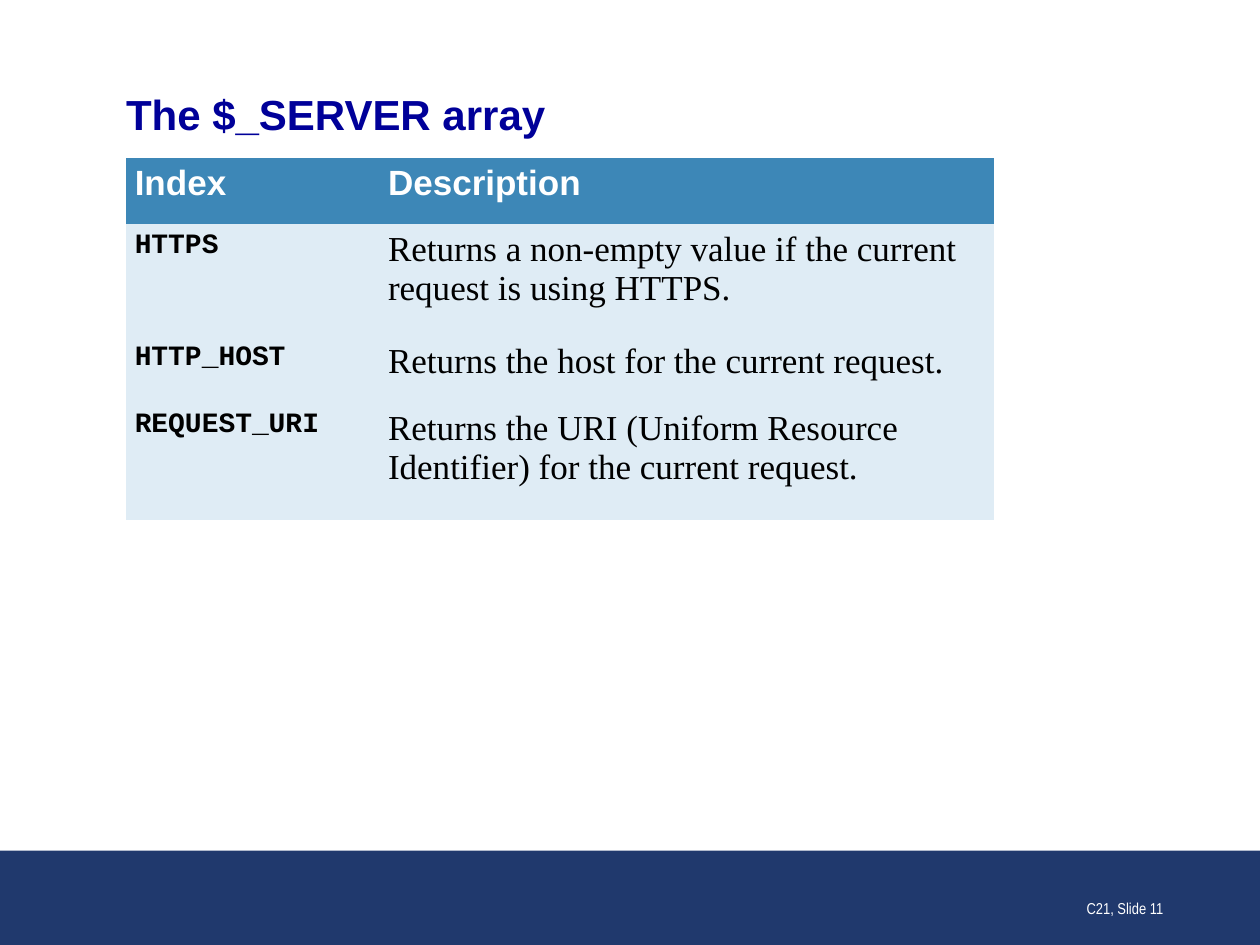
import dataclasses

import pptx
import pptx.dml.color
import pptx.enum.shapes
import pptx.enum.text
import pptx.util


@dataclasses.dataclass(frozen=True)
class TextStyle:
    font: str
    size: int
    color: str
    bold: bool = False


@dataclasses.dataclass(frozen=True)
class Theme:
    band: str = "20396D"
    header_fill: str = "3D87B7"
    body_fill: str = "DFECF5"
    title: TextStyle = TextStyle("Arial", 24, "000099", True)
    header: TextStyle = TextStyle("Arial", 20, "FFFFFF", True)
    code: TextStyle = TextStyle("Courier New", 16, "000000", True)
    description: TextStyle = TextStyle("Times New Roman", 20, "000000")
    footer: TextStyle = TextStyle("Arial Narrow", 9, "FFFFFF")


THEME = Theme()
WIDTH, HEIGHT = 10, 7.5
MARGIN = WIDTH / 10
BAND_HEIGHT = HEIGHT / 10
COLUMN_WIDTHS = (2.01, 4.88)
NO_STYLE_NO_GRID = "{2D5ABB26-0587-4C30-8999-92F81FD0307C}"

# Row height, space after, index, description
ROWS = (
    (0.53, 6, "Index", "Description"),
    (0.89, 6, "HTTPS",
     "Returns a non-empty value if the current request is using HTTPS."),
    (0.53, 6, "HTTP_HOST", "Returns the host for the current request."),
    (0.93, 9, "REQUEST_URI",
     "Returns the URI (Uniform Resource Identifier) for the current request."),
)


def inches(*lengths):
    return [pptx.util.Inches(length) for length in lengths]


def set_fill(fill, color):
    fill.solid()
    fill.fore_color.rgb = pptx.dml.color.RGBColor.from_string(color)


def write(text_frame, text, style, align="LEFT", space_after=0):
    text_frame.word_wrap = True
    paragraph = text_frame.paragraphs[0]
    paragraph.alignment = getattr(pptx.enum.text.PP_ALIGN, align)
    paragraph.space_after = pptx.util.Pt(space_after)
    run = paragraph.add_run()
    run.text = text
    run.font.name = style.font
    run.font.size = pptx.util.Pt(style.size)
    run.font.bold = style.bold
    run.font.color.rgb = pptx.dml.color.RGBColor.from_string(style.color)


def add_band(slide):
    shape = slide.shapes.add_shape(
        pptx.enum.shapes.MSO_SHAPE.RECTANGLE,
        *inches(0, HEIGHT - BAND_HEIGHT, WIDTH, BAND_HEIGHT))
    shape.shadow.inherit = False
    set_fill(shape.fill, THEME.band)
    shape.line.fill.background()


def set_title(slide, text):
    title = slide.shapes.title
    title.left, title.top, title.width, title.height = inches(
        MARGIN, 0.7, WIDTH - 2 * MARGIN, 0.4)
    frame = title.text_frame
    frame.margin_left = frame.margin_right = 0
    frame.margin_top = frame.margin_bottom = 0
    frame.vertical_anchor = pptx.enum.text.MSO_ANCHOR.MIDDLE
    frame.auto_size = pptx.enum.text.MSO_AUTO_SIZE.SHAPE_TO_FIT_TEXT
    write(frame, text, THEME.title)


def fill_cell(cell, text, style, color, space_after):
    set_fill(cell.fill, color)
    cell.margin_left, cell.margin_right = inches(0.07, 0.07)
    cell.margin_top, cell.margin_bottom = inches(0.05, 0.05)
    write(cell.text_frame, text, style, space_after=space_after)


def add_index_table(slide):
    total_height = sum(row[0] for row in ROWS)
    frame = slide.shapes.add_table(
        len(ROWS), len(COLUMN_WIDTHS),
        *inches(MARGIN, HEIGHT / 6, sum(COLUMN_WIDTHS), total_height))
    table = frame.table
    table.horz_banding = False
    table._tbl.tblPr.find(
        pptx.oxml.ns.qn("a:tableStyleId")).text = NO_STYLE_NO_GRID
    for column, width in zip(table.columns, COLUMN_WIDTHS):
        column.width = pptx.util.Inches(width)
    for number, (height, space_after, *texts) in enumerate(ROWS):
        table.rows[number].height = pptx.util.Inches(height)
        if number == 0:
            color, styles = THEME.header_fill, (THEME.header, THEME.header)
        else:
            color, styles = THEME.body_fill, (THEME.code, THEME.description)
        for cell, text, style in zip(table.rows[number].cells, texts, styles):
            fill_cell(cell, text, style, color, space_after)


def add_footer(slide, text):
    box = slide.shapes.add_textbox(*inches(7.25, 6.83, 2.08, 0.5))
    box.text_frame.vertical_anchor = pptx.enum.text.MSO_ANCHOR.BOTTOM
    write(box.text_frame, text, THEME.footer, align="RIGHT")


def main():
    presentation = pptx.Presentation()
    presentation.slide_width, presentation.slide_height = inches(WIDTH, HEIGHT)
    title_only = presentation.slide_layouts[5]
    slide = presentation.slides.add_slide(title_only)

    # Background band, then content
    add_band(slide)
    set_title(slide, "The $_SERVER array")
    add_index_table(slide)
    add_footer(slide, "C21, Slide 11")
    presentation.save("out.pptx")


if __name__ == "__main__":
    main()
